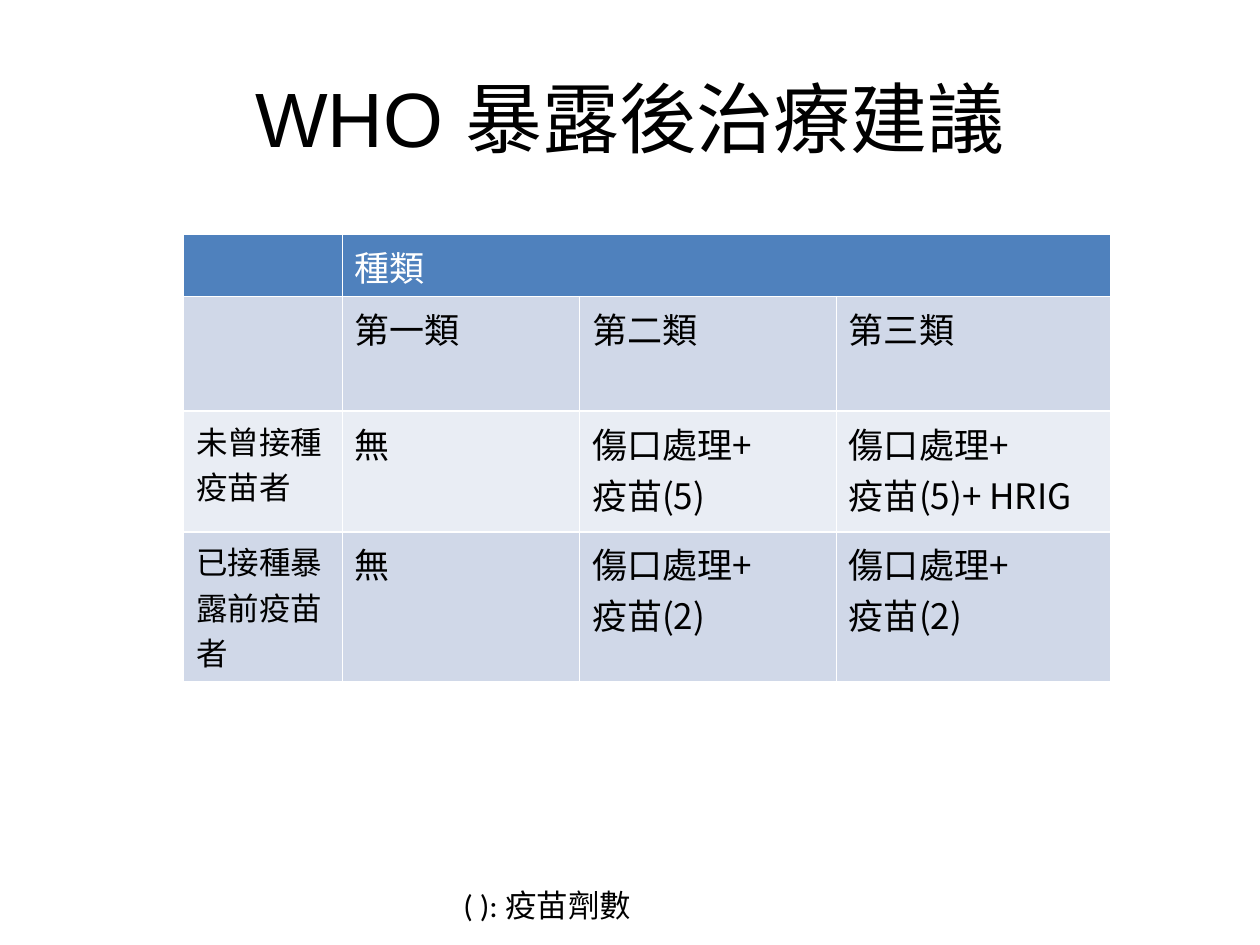
from dataclasses import dataclass

from lxml import etree
from pptx import Presentation
from pptx.dml.color import RGBColor
from pptx.enum.text import MSO_ANCHOR, PP_ALIGN
from pptx.oxml.ns import qn
from pptx.util import Cm, Pt

CENTER = PP_ALIGN.CENTER
LEFT = PP_ALIGN.LEFT
MIDDLE = MSO_ANCHOR.MIDDLE
TOP = MSO_ANCHOR.TOP


@dataclass(frozen=True)
class Theme:
    black: str = "000000"
    white: str = "FFFFFF"
    header: str = "4F81BD"
    bands: tuple = ("D0D8E8", "E9EDF4")
    title_font: str = "Arial"
    note_font: str = "Calibri"
    cjk_font: str = "Noto Sans CJK SC"
    title_size: int = 44
    cell_size: int = 20
    small_size: int = 18


THEME = Theme()

COLUMN_WIDTHS = (3.2, 4.78, 5.18, 5.54)
# The last row holds three lines of label text
ROW_HEIGHTS = (1.25, 2.31, 2.43, 3.02)
ROWS = (
    ("", "種類", "", ""),
    ("", "第一類", "第二類", "第三類"),
    ("未曾接種疫苗者", "無", "傷口處理+\n疫苗(5)", "傷口處理+\n疫苗(5)+ HRIG"),
    ("已接種暴露前疫苗者", "無", "傷口處理+\n疫苗(2)", "傷口處理+\n疫苗(2)"),
)


def add_span(para, text, size, color, font):
    span = para.add_run()
    span.text = text
    span.font.size = Pt(size)
    span.font.bold = False
    span.font.name = font
    span.font.color.rgb = RGBColor.from_string(color)
    east_asian = etree.SubElement(span.font._element, qn("a:ea"))
    east_asian.set("typeface", THEME.cjk_font)


def add_text(page, box, spans, size, align, anchor):
    """Place one paragraph made of (text, font) spans in a box."""
    frame = page.shapes.add_textbox(*(Cm(value) for value in box)).text_frame
    frame.word_wrap = True
    frame.vertical_anchor = anchor
    para = frame.paragraphs[0]
    para.alignment = align
    for text, font in spans:
        add_span(para, text, size, THEME.black, font)


def style_cell(cell, text, row, column):
    """Fill a cell; its white borders come from the default table style."""
    is_header = row == 0
    cell.fill.solid()
    fill = THEME.header if is_header else THEME.bands[(row - 1) % 2]
    cell.fill.fore_color.rgb = RGBColor.from_string(fill)
    if not text:
        return
    size = THEME.small_size if column == 0 else THEME.cell_size
    color = THEME.white if is_header else THEME.black
    frame = cell.text_frame
    for index, line in enumerate(text.split("\n")):
        para = frame.add_paragraph() if index else frame.paragraphs[0]
        add_span(para, line, size, color, THEME.cjk_font)


def add_treatment_table(page, left, top):
    table = page.shapes.add_table(
        len(ROW_HEIGHTS), len(COLUMN_WIDTHS), Cm(left), Cm(top),
        Cm(sum(COLUMN_WIDTHS)), Cm(sum(ROW_HEIGHTS)),
    ).table
    for column, width in zip(table.columns, COLUMN_WIDTHS):
        column.width = Cm(width)
    for row, height in zip(table.rows, ROW_HEIGHTS):
        row.height = Cm(height)
    for row, texts in enumerate(ROWS):
        for column, text in enumerate(texts):
            style_cell(table.cell(row, column), text, row, column)
    # The category heading covers all three categories
    table.cell(0, 1).merge(table.cell(0, 3))


def main():
    deck = Presentation()
    deck.slide_width, deck.slide_height = Cm(25.4), Cm(19.05)
    page = deck.slides.add_slide(deck.slide_layouts[6])

    # Title
    add_text(page, (1.27, 0.76, 22.86, 3.18),
             [("WHO 暴露後治療建議", THEME.title_font)],
             THEME.title_size, CENTER, MIDDLE)
    # Treatment by category
    add_treatment_table(page, 3.7, 4.73)
    # Key to the dose counts
    add_text(page, (9.09, 17.73, 5.21, 1.02),
             [("( ): ", THEME.note_font), ("疫苗劑數", THEME.cjk_font)],
             THEME.small_size, LEFT, TOP)

    deck.save("out.pptx")


if __name__ == "__main__":
    main()
